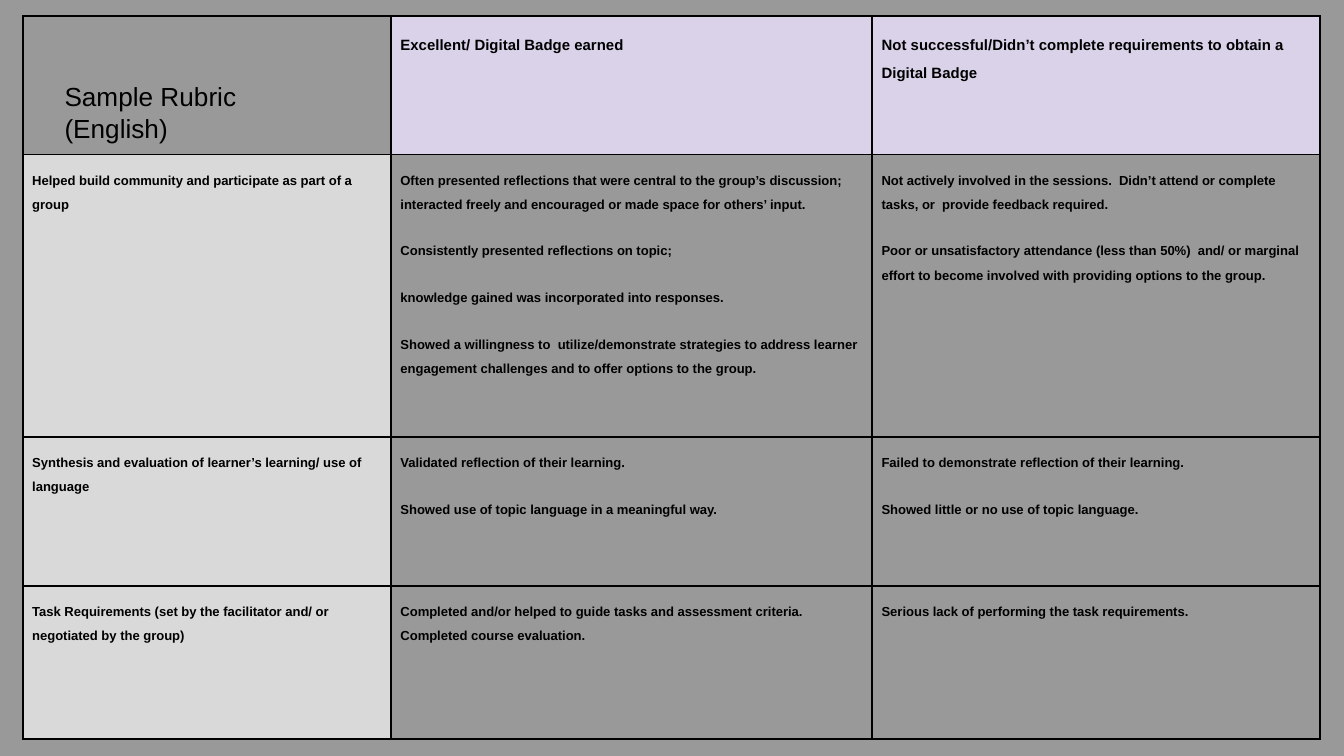
from dataclasses import dataclass

from lxml import etree
from pptx import Presentation
from pptx.dml.color import RGBColor
from pptx.enum.text import MSO_ANCHOR, MSO_AUTO_SIZE, PP_ALIGN
from pptx.oxml.ns import qn
from pptx.util import Inches, Pt

TOP = MSO_ANCHOR.TOP
LEFT = PP_ALIGN.LEFT
FIT_SHAPE = MSO_AUTO_SIZE.SHAPE_TO_FIT_TEXT
TITLE_ONLY = 5


@dataclass(frozen=True)
class Theme:
    font: str = "Arial"
    ink: str = "000000"
    page: str = "999999"
    header: str = "D9D2E9"
    criterion: str = "D9D9D9"
    title_size: int = 14
    header_size: int = 8
    body_size: int = 7
    border: int = 1
    line_spacing: float = 1.66
    gap: int = 12


THEME = Theme()

# Widescreen slide and table grid, in inches
WIDTH = 10
HEIGHT = WIDTH * 9 / 16
TABLE_LEFT, TABLE_TOP = 0.17, 0.12
COLUMNS = [2.74, 3.58, 3.33]
ROWS = [1.03, 2.1, 1.11, 1.14]
CELL_MARGIN = 0.07

# One list of paragraphs for each cell
RUBRIC = [
    [
        [],
        ["Excellent/ Digital Badge earned"],
        ["Not successful/Didn’t complete requirements to obtain a Digital Badge"],
    ],
    [
        ["Helped build community and participate as part of a group"],
        [
            "Often presented reflections that were central to the group’s discussion; "
            "interacted freely and encouraged or made space for others’ input.",
            "Consistently presented reflections on topic;",
            "knowledge gained was incorporated into responses.",
            "Showed a willingness to  utilize/demonstrate strategies to address learner "
            "engagement challenges and to offer options to the group.",
        ],
        [
            "Not actively involved in the sessions.  Didn’t attend or complete tasks, "
            "or  provide feedback required.",
            "Poor or unsatisfactory attendance (less than 50%)  and/ or marginal effort "
            "to become involved with providing options to the group.",
        ],
    ],
    [
        ["Synthesis and evaluation of learner’s learning/ use of language"],
        [
            "Validated reflection of their learning.",
            "Showed use of topic language in a meaningful way.",
        ],
        [
            "Failed to demonstrate reflection of their learning.",
            "Showed little or no use of topic language.",
        ],
    ],
    [
        ["Task Requirements (set by the facilitator and/ or negotiated by the group)"],
        [
            "Completed and/or helped to guide tasks and assessment criteria.  "
            "Completed course evaluation."
        ],
        ["Serious lack of performing the task requirements."],
    ],
]


def add_span(para, text, size, bold=False):
    span = para.add_run()
    span.text = text
    span.font.name = THEME.font
    span.font.size = Pt(size)
    span.font.bold = bold
    span.font.color.rgb = RGBColor.from_string(THEME.ink)


def set_borders(cell):
    properties = cell._tc.get_or_add_tcPr()
    for side in ("lnL", "lnR", "lnT", "lnB"):
        line = etree.SubElement(properties, qn(f"a:{side}"), w=str(Pt(THEME.border)))
        fill = etree.SubElement(line, qn("a:solidFill"))
        etree.SubElement(fill, qn("a:srgbClr"), val=THEME.ink)


def set_fill(cell, color):
    if color:
        cell.fill.solid()
        cell.fill.fore_color.rgb = RGBColor.from_string(color)
    else:
        cell.fill.background()


def cell_color(row, column):
    if row == 0:
        return THEME.header if column else None
    return None if column else THEME.criterion


def write_cell(cell, texts, size):
    cell.margin_left = cell.margin_right = Inches(CELL_MARGIN)
    cell.margin_top = cell.margin_bottom = Inches(CELL_MARGIN)
    cell.vertical_anchor = TOP
    frame = cell.text_frame
    for index, text in enumerate(texts):
        para = frame.add_paragraph() if index else frame.paragraphs[0]
        para.line_spacing = THEME.line_spacing
        para.space_before = Pt(THEME.gap)
        if index == len(texts) - 1:
            para.space_after = Pt(THEME.gap)
        add_span(para, text, size, bold=True)


def add_rubric(page):
    frame = page.shapes.add_table(
        len(ROWS), len(COLUMNS), Inches(TABLE_LEFT), Inches(TABLE_TOP),
        Inches(sum(COLUMNS)), Inches(sum(ROWS)))
    table = frame.table
    table.first_row = table.horz_banding = False
    for column, width in zip(table.columns, COLUMNS):
        column.width = Inches(width)
    for row, height in zip(table.rows, ROWS):
        row.height = Inches(height)
    for r, row_texts in enumerate(RUBRIC):
        size = THEME.body_size if r else THEME.header_size
        for c, texts in enumerate(row_texts):
            cell = table.cell(r, c)
            set_borders(cell)
            set_fill(cell, cell_color(r, c))
            write_cell(cell, texts, size)


def add_title(page, text):
    box = page.shapes.title
    box.left, box.top = Inches(0.38), Inches(0.5)
    box.width, box.height = Inches(1.88), Inches(0.67)
    frame = box.text_frame
    frame.word_wrap = True
    frame.auto_size = FIT_SHAPE
    frame.vertical_anchor = TOP
    frame.margin_left = frame.margin_right = Inches(0.1)
    frame.margin_top = frame.margin_bottom = Inches(0.1)
    para = frame.paragraphs[0]
    para.alignment = LEFT
    add_span(para, text, THEME.title_size)


def main():
    deck = Presentation()
    deck.slide_width, deck.slide_height = Inches(WIDTH), Inches(HEIGHT)
    page = deck.slides.add_slide(deck.slide_layouts[TITLE_ONLY])

    # Background
    page.background.fill.solid()
    page.background.fill.fore_color.rgb = RGBColor.from_string(THEME.page)

    # Rubric table with the title in its empty corner cell
    add_rubric(page)
    add_title(page, "Sample Rubric (English)")
    deck.save("out.pptx")


if __name__ == "__main__":
    main()
